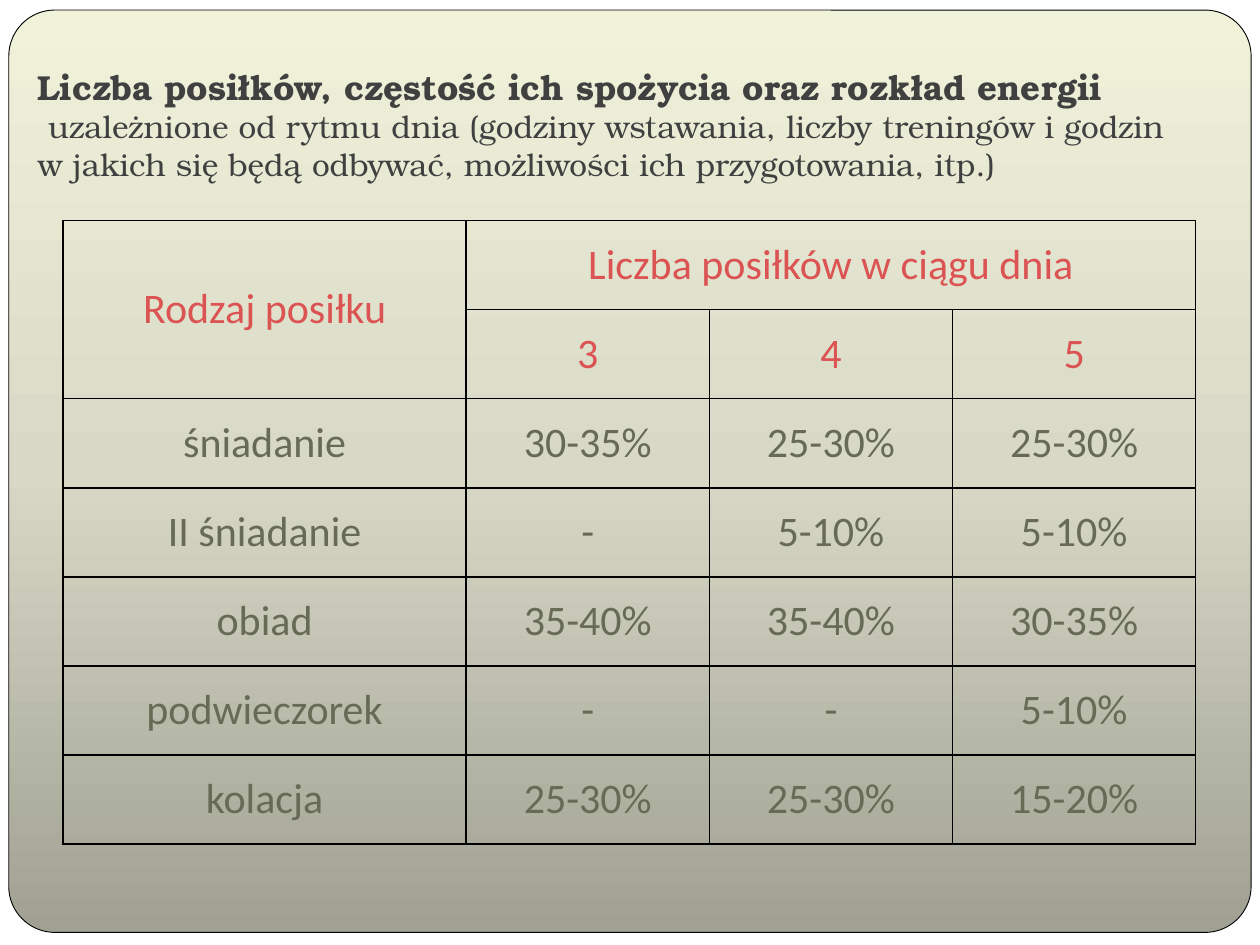
import copy

import pptx
import pptx.dml.color
import pptx.enum.dml
import pptx.enum.shapes
import pptx.enum.text
import pptx.oxml
import pptx.oxml.ns
import pptx.util

Inches = pptx.util.Inches
Pt = pptx.util.Pt
RGBColor = pptx.dml.color.RGBColor
PP_ALIGN = pptx.enum.text.PP_ALIGN
MSO_ANCHOR = pptx.enum.text.MSO_ANCHOR

WHITE = RGBColor(0xFF, 0xFF, 0xFF)
BLACK = RGBColor(0x00, 0x00, 0x00)
STONE = RGBColor(0xA0, 0xA1, 0x92)
SAGE = RGBColor(0xD7, 0xD9, 0xC6)
CREAM = RGBColor(0xF0, 0xF2, 0xDA)
CHARCOAL = RGBColor(0x40, 0x40, 0x40)
RED = RGBColor(0xDB, 0x53, 0x53)
OLIVE = RGBColor(0x67, 0x6A, 0x55)

HEADING = "Liczba posiłków, częstość ich spożycia oraz rozkład energii"
EXPLANATION = (" uzależnione od rytmu dnia (godziny wstawania, liczby treningów i godzin "
               "w jakich się będą odbywać, możliwości ich przygotowania, itp.)")
MEALS = [
    ["Rodzaj posiłku", "Liczba posiłków w ciągu dnia", "", ""],
    ["", "3", "4", "5"],
    ["śniadanie", "30-35%", "25-30%", "25-30%"],
    ["II śniadanie", "-", "5-10%", "5-10%"],
    ["obiad", "35-40%", "35-40%", "30-35%"],
    ["podwieczorek", "-", "-", "5-10%"],
    ["kolacja", "25-30%", "25-30%", "15-20%"],
]
HEADER_ROWS = 2


class SlideBuilder:
    title_font = "TeX Gyre Bonum"
    table_font = "Calibri"

    def __init__(self, slide):
        self.slide = slide
        background = slide.background.fill
        background.solid()
        background.fore_color.rgb = WHITE

    def panel(self, left, top, width, height):
        """Rounded panel fading from cream at the top to stone at the bottom."""
        panel = self.slide.shapes.add_shape(
            pptx.enum.shapes.MSO_SHAPE.ROUNDED_RECTANGLE,
            Inches(left), Inches(top), Inches(width), Inches(height))
        panel.adjustments[0] = 0.05
        panel.shadow.inherit = False
        panel.line.color.rgb = BLACK
        panel.line.width = Pt(0.5)
        panel.fill.gradient()
        panel.fill.gradient_angle = 90
        stop_list = panel._element.xpath(".//a:gsLst")[0]
        middle = copy.deepcopy(stop_list[0])
        middle.set("pos", "50000")
        stop_list.insert(1, middle)
        for stop, color in zip(panel.fill.gradient_stops, (STONE, SAGE, CREAM)):
            stop.color.rgb = color

    def title(self, left, top, width, height, heading, explanation):
        title = self.slide.shapes.title
        title.left, title.top = Inches(left), Inches(top)
        title.width, title.height = Inches(width), Inches(height)
        # Keep the title in front of the panel.
        self.slide.shapes._spTree.append(title._element)
        frame = title.text_frame
        frame.text = f"{heading}\v{explanation}"
        frame.word_wrap = True
        frame.auto_size = pptx.enum.text.MSO_AUTO_SIZE.NONE
        frame.vertical_anchor = MSO_ANCHOR.BOTTOM
        frame.margin_bottom = Inches(0.1)
        paragraph = frame.paragraphs[0]
        paragraph.alignment = PP_ALIGN.LEFT
        for run, size, bold in zip(paragraph.runs, (19.8, 18), (True, False)):
            self.style(run, self.title_font, size, CHARCOAL, bold)
        line_break = paragraph._p.xpath("a:br")[0]
        line_break.append(copy.deepcopy(paragraph.runs[0]._r.rPr))

    def table(self, left, top, column_widths, row_height, rows):
        table = self.slide.shapes.add_table(
            len(rows), len(column_widths), Inches(left), Inches(top),
            Inches(sum(column_widths)), Inches(row_height * len(rows))).table
        table.first_row = False
        table.horz_banding = False
        for column, width in zip(table.columns, column_widths):
            column.width = Inches(width)
        for r, values in enumerate(rows):
            table.rows[r].height = Inches(row_height)
            for c, value in enumerate(values):
                self.cell(table.cell(r, c), value, RED if r < HEADER_ROWS else OLIVE)
        table.cell(0, 0).merge(table.cell(1, 0))
        table.cell(0, 1).merge(table.cell(0, 3))

    def cell(self, cell, value, color):
        cell.text_frame.text = value
        cell.vertical_anchor = MSO_ANCHOR.MIDDLE
        paragraph = cell.text_frame.paragraphs[0]
        paragraph.alignment = PP_ALIGN.CENTER
        for run in paragraph.runs:
            self.style(run, self.table_font, 24, color)
        cell.fill.background()
        properties = cell._tc.get_or_add_tcPr()
        for position, side in enumerate(("lnL", "lnR", "lnT", "lnB")):
            properties.insert(position, pptx.oxml.parse_xml(
                f'<a:{side} {pptx.oxml.ns.nsdecls("a")} w="{Pt(1)}">'
                f'<a:solidFill><a:srgbClr val="{BLACK}"/></a:solidFill></a:{side}>'))

    def style(self, run, font, size, color, bold=False):
        run.font.name = font
        run.font.size = Pt(size)
        run.font.bold = bold
        run.font.color.rgb = color


def main():
    presentation = pptx.Presentation()
    presentation.slide_width = Inches(10)
    presentation.slide_height = Inches(7.5)
    title_only = presentation.slide_layouts[5]
    builder = SlideBuilder(presentation.slides.add_slide(title_only))
    builder.panel(0.07, 0.08, 9.86, 7.32)
    builder.title(0.2, 0.3, 9.3, 1.25, HEADING, EXPLANATION)
    builder.table(0.5, 1.75, [3.2] + [1.93] * 3, 4.95 / len(MEALS), MEALS)
    presentation.save("out.pptx")


if __name__ == "__main__":
    main()
